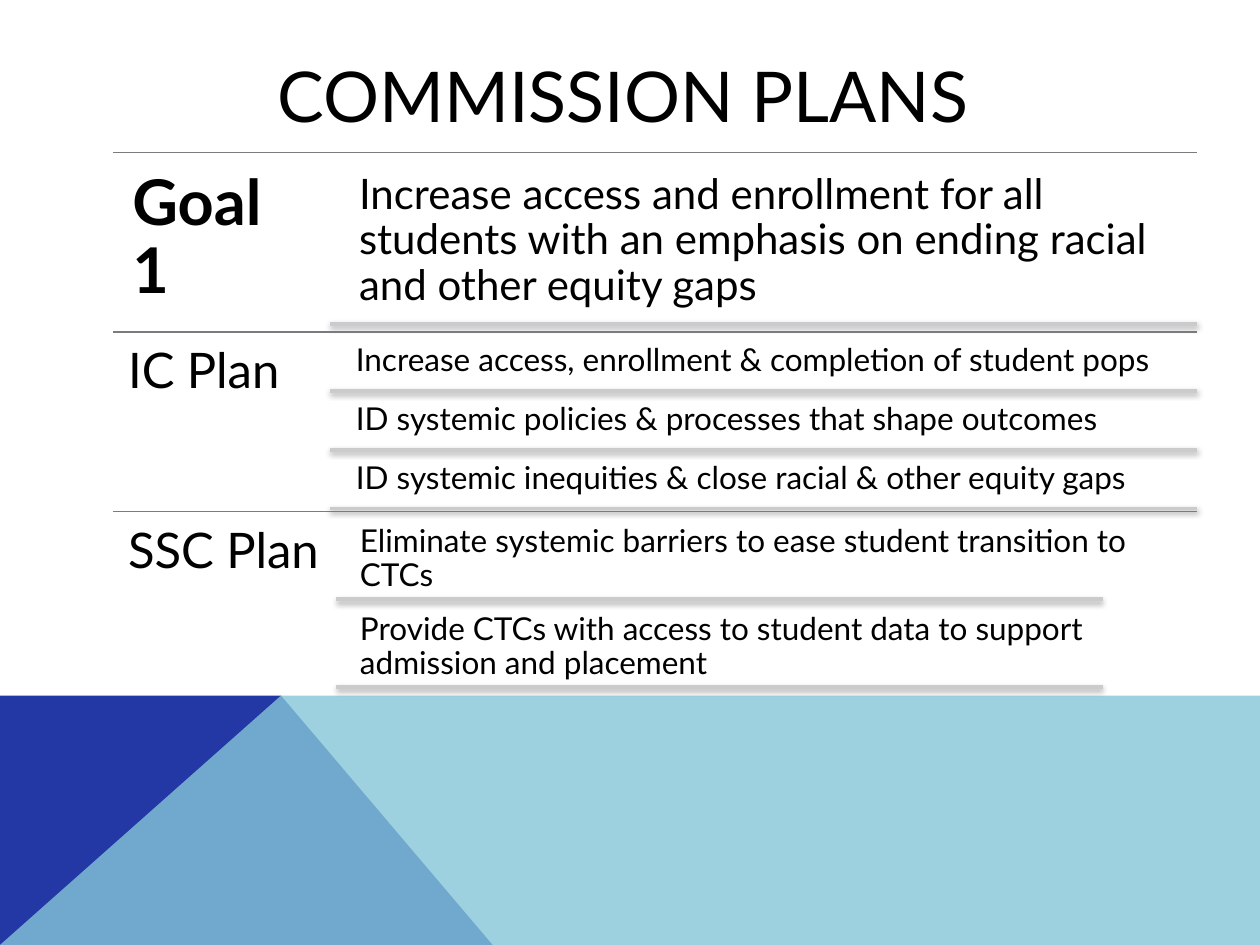
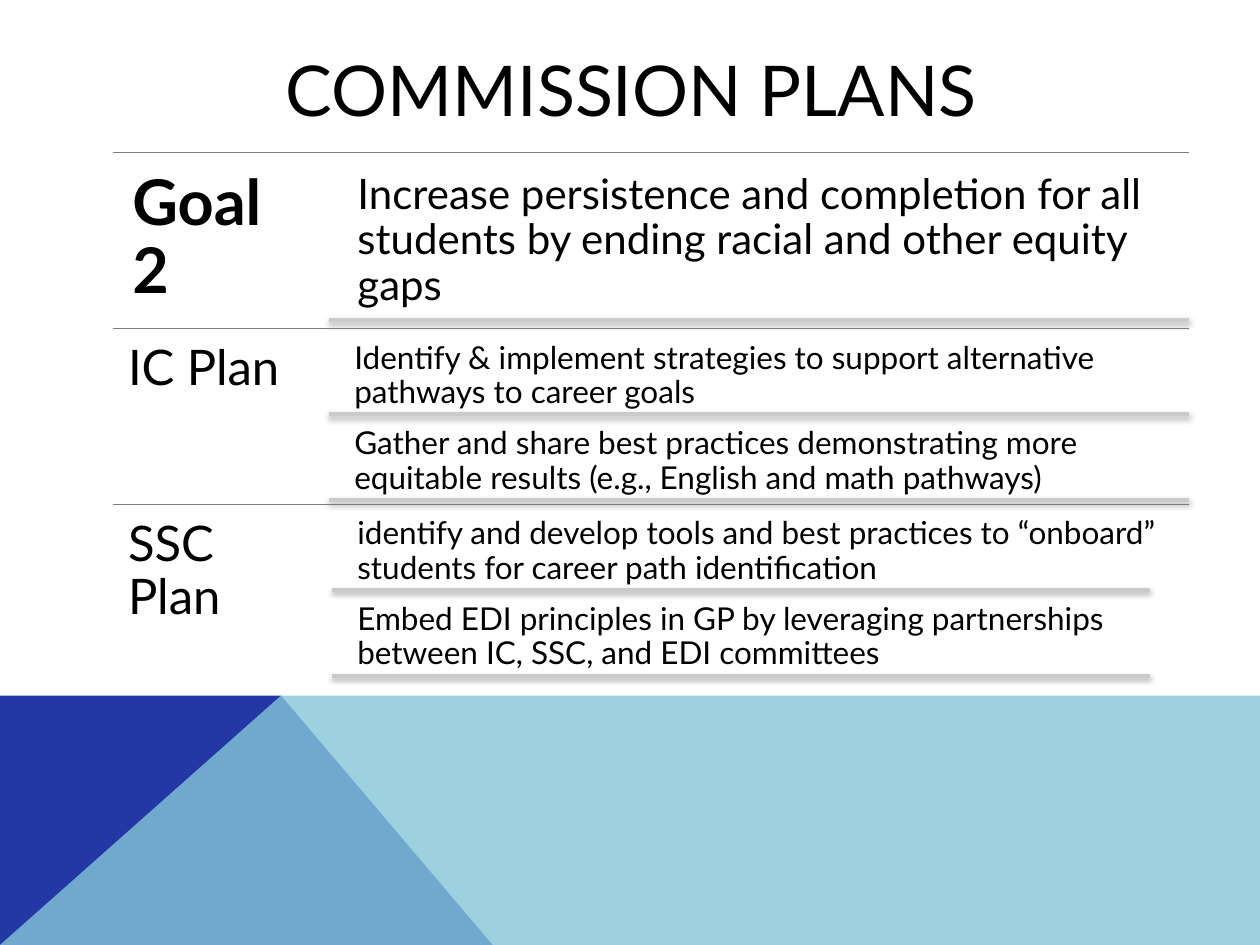
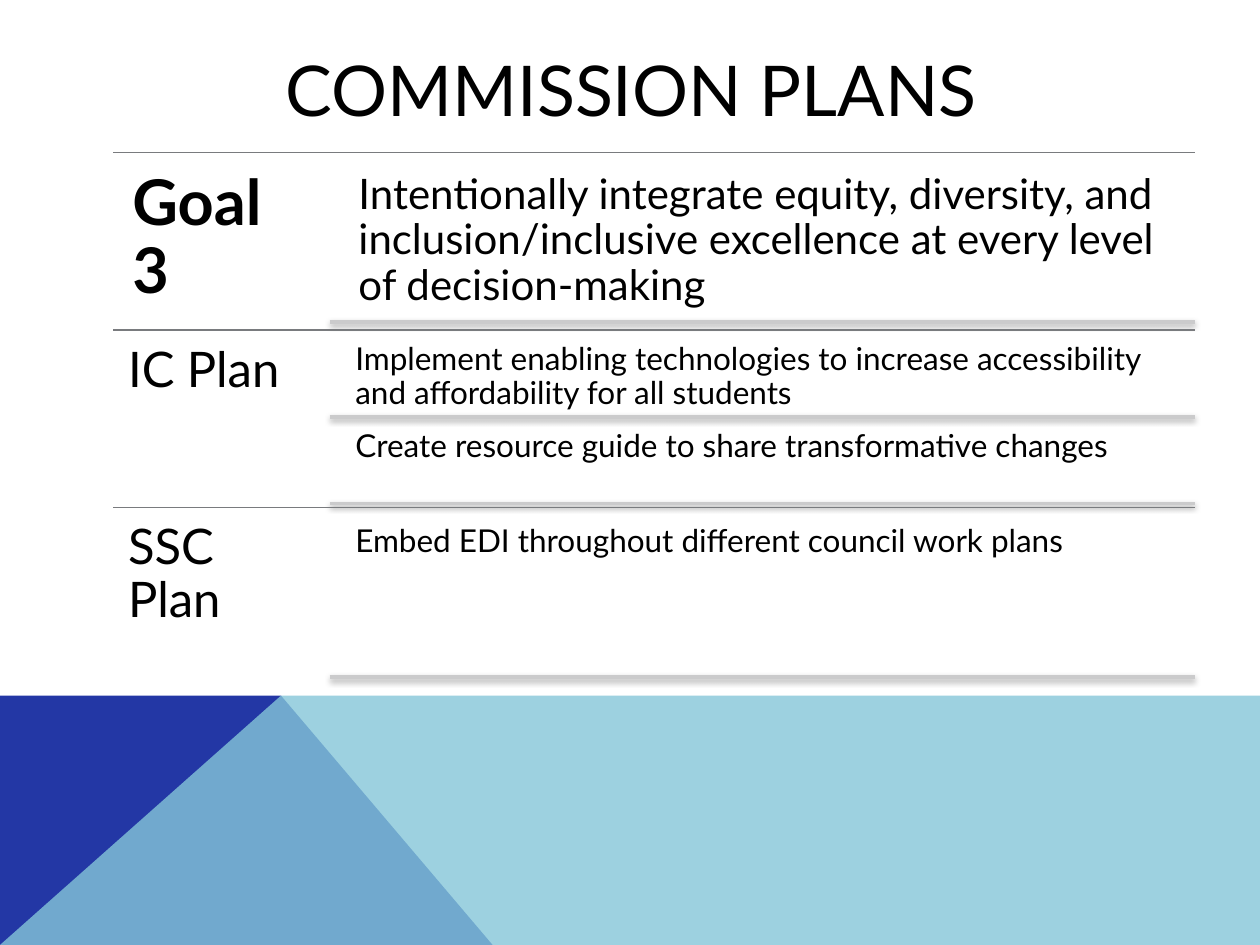
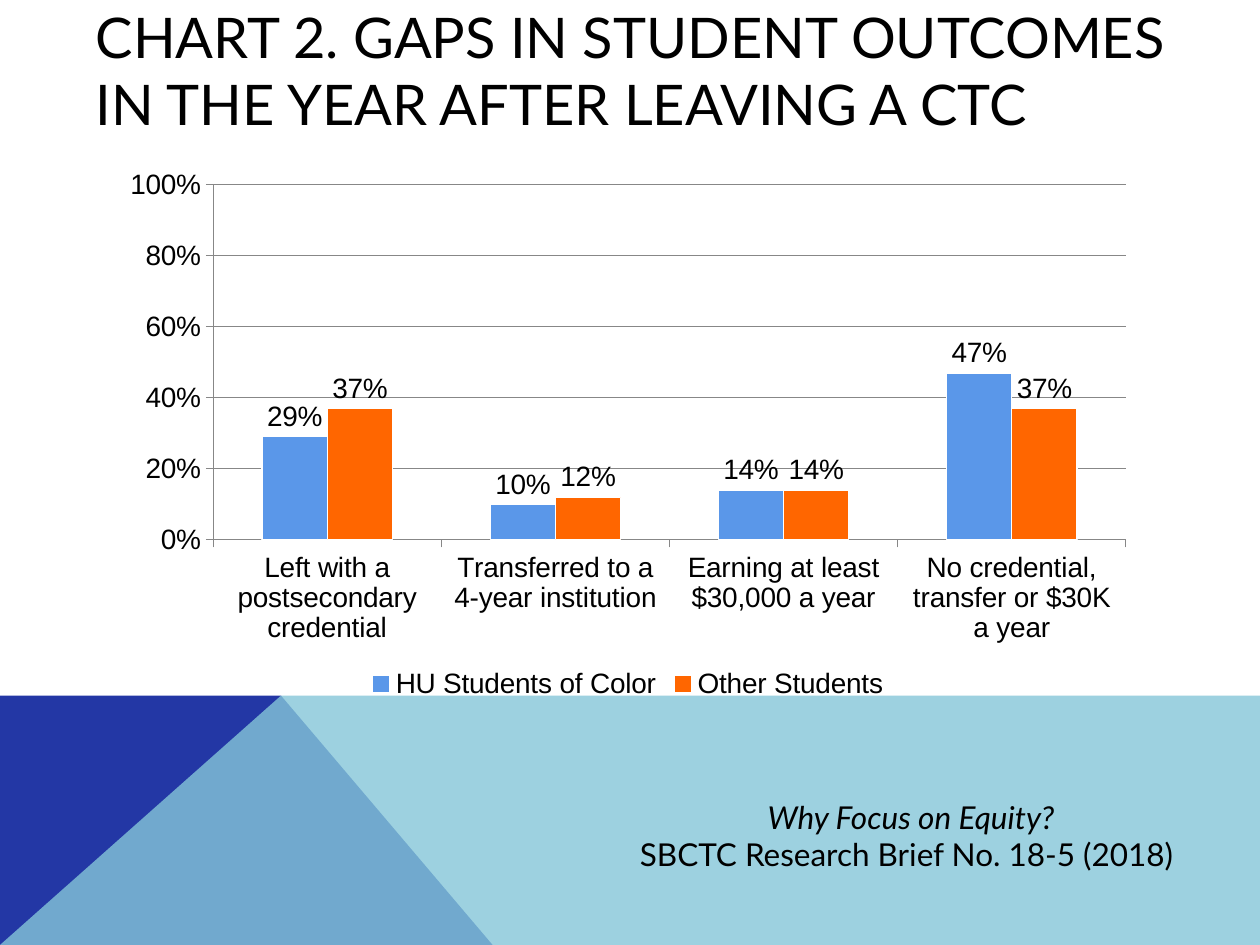
from dataclasses import dataclass
from typing import Optional

from lxml import etree
from pptx import Presentation
from pptx import util as u
from pptx.chart import data as chart_data
from pptx.dml import color
from pptx.enum import chart as charts
from pptx.enum import shapes, text
from pptx.oxml import ns

# Shared style
BLACK = color.RGBColor(0x00, 0x00, 0x00)
WHITE = color.RGBColor(0xFF, 0xFF, 0xFF)
NAVY = color.RGBColor(0x23, 0x37, 0xA5)
TEAL = color.RGBColor(0x85, 0xC6, 0xD9)
DIVIDER_GREY = color.RGBColor(0x79, 0x7B, 0x7E)
RULE_GREY = color.RGBColor(0xCB, 0xCB, 0xCC)
AXIS_GREY = color.RGBColor(0x87, 0x87, 0x87)
BAR_BLUE = color.RGBColor(0x5A, 0x97, 0xE9)
BAR_ORANGE = color.RGBColor(0xFF, 0x66, 0x00)
TEXT_FONT = "Lato"
CHART_FONT = "Arial"

PAGE_WIDTH, PAGE_HEIGHT = 720, 540
BAND_TOP = 397.5

# Goal pages: three blocks of equal height under one another
PLAN_LEFT, PLAN_TOP = 64.8, 87.1
LABEL_SHARE = 0.2
ITEM_TO_GAP = 20  # an item is this many times as tall as the gap around it


@dataclass
class LineStyle:
    colour: color.RGBColor
    width: float
    shadow_opacity: int
    shadow_distance: float


DIVIDER = LineStyle(DIVIDER_GREY, 0.75, 35, 1.8)
RULE = LineStyle(RULE_GREY, 2, 38, 1.6)


@dataclass
class Frame:
    left: float
    top: float
    width: float
    height: float


@dataclass
class Item:
    text: str
    right: Optional[float] = None


@dataclass
class Block:
    label: str
    items: list[Item]
    label_size: int = 28
    item_size: int = 18
    label_width: Optional[float] = None
    indent: float = 9.3
    rule_right: Optional[float] = None


@dataclass
class Plan:
    title_frame: Frame
    right: float
    block_height: float
    blocks: list[Block]


def goal(number: int, wording: str) -> Block:
    return Block(f"Goal {number}", [Item(wording)], 36, 24)


CENTRED_TITLE = Frame(64.8, 28.8, 591.8, 43.2)

PLANS = [
    Plan(Frame(43.9, 32.4, 624.2, 43.2), 684, 102.6, [
        goal(1, "Increase access and enrollment for all students with an "
                "emphasis on ending racial and other equity gaps"),
        Block("IC Plan", [
            Item("Increase access, enrollment & completion of student pops"),
            Item("ID systemic policies & processes that shape outcomes"),
            Item("ID systemic inequities & close racial & other equity gaps"),
        ]),
        Block("SSC Plan", [
            Item("Eliminate systemic barriers to ease student transition to CTCs"),
            Item("Provide CTCs with access to student data to support "
                 "admission and placement", 630),
        ], label_width=127.5, indent=8, rule_right=630),
    ]),
    Plan(CENTRED_TITLE, 679.7, 100.5, [
        goal(2, "Increase persistence and completion for all students by "
                "ending racial and other equity gaps"),
        Block("IC Plan", [
            Item("Identify & implement strategies to support alternative "
                 "pathways to career goals"),
            Item("Gather and share best practices demonstrating more equitable "
                 "results (e.g., English and math pathways)", 667.4),
        ]),
        Block("SSC Plan", [
            Item("identify and develop tools and best practices to “onboard” "
                 "students for career path identification"),
            Item("Embed EDI principles in GP by leveraging partnerships "
                 "between IC, SSC, and EDI committees", 657.4),
        ], label_width=125, indent=9, rule_right=657.4),
    ]),
    Plan(CENTRED_TITLE, 682.6, 101.5, [
        goal(3, "Intentionally integrate equity, diversity, and "
                "inclusion/inclusive excellence at every level of decision-making"),
        Block("IC Plan", [
            Item("Implement enabling technologies to increase accessibility "
                 "and affordability for all students"),
            Item("Create resource guide to share transformative changes"),
        ]),
        Block("SSC Plan", [
            Item("Embed EDI throughout different council work plans"),
        ]),
    ]),
]


# Basic parts
def style_font(font, size: float, name: str = TEXT_FONT, bold: bool = False,
               italic: bool = False) -> None:
    font.name, font.size = name, u.Pt(size)
    font.bold, font.italic = bold, italic
    font.color.rgb = BLACK


def place(shape, frame: Frame) -> None:
    shape.left, shape.top = u.Pt(frame.left), u.Pt(frame.top)
    shape.width, shape.height = u.Pt(frame.width), u.Pt(frame.height)


def add_page(deck, title: str, frame: Frame, size: int, align):
    page = deck.slides.add_slide(deck.slide_layouts[5])
    box = page.shapes.title
    place(box, frame)
    box.text_frame.text = title
    box.text_frame.word_wrap = True
    box.text_frame.auto_size = text.MSO_AUTO_SIZE.NONE
    box.text_frame.vertical_anchor = text.MSO_ANCHOR.MIDDLE
    para = box.text_frame.paragraphs[0]
    para.alignment = align
    style_font(para.font, size)
    return page


def add_box(page, frame: Frame):
    box = page.shapes.add_textbox(u.Pt(frame.left), u.Pt(frame.top),
                                  u.Pt(frame.width), u.Pt(frame.height))
    box.text_frame.word_wrap = True
    return box


def add_wording(page, frame: Frame, wording: str, size: int,
                bold: bool = False) -> None:
    body = add_box(page, frame).text_frame
    inset = u.Pt(0.3 * size)
    body.margin_left = body.margin_right = inset
    body.margin_top = body.margin_bottom = inset
    para = body.paragraphs[0]
    para.text = wording
    para.line_spacing = 0.9
    style_font(para.font, size, bold=bold)


def add_line(page, left: float, right: float, y: float, style: LineStyle) -> None:
    line = page.shapes.add_connector(shapes.MSO_CONNECTOR.STRAIGHT,
                                     u.Pt(left), u.Pt(y), u.Pt(right), u.Pt(y))
    line.line.color.rgb = style.colour
    line.line.width = u.Pt(style.width)
    properties = line.element.find(ns.qn("p:spPr"))
    effects = etree.SubElement(properties, ns.qn("a:effectLst"))
    shadow = etree.SubElement(effects, ns.qn("a:outerShdw"), {
        "blurRad": str(u.Pt(3.1)), "dist": str(u.Pt(style.shadow_distance)),
        "dir": "5400000", "rotWithShape": "0"})
    tint = etree.SubElement(shadow, ns.qn("a:srgbClr"), val=str(BLACK))
    etree.SubElement(tint, ns.qn("a:alpha"), val=str(style.shadow_opacity * 1000))


# Bottom band, moved into the layout so that every page shows it
def add_band_part(page, points: list[tuple[float, float]],
                  colour: color.RGBColor, opacity: int = 100) -> None:
    corners = [(u.Pt(x), u.Pt(y)) for x, y in points]
    builder = page.shapes.build_freeform(*corners[0])
    builder.add_line_segments(corners[1:], close=True)
    part = builder.convert_to_shape()
    part.shadow.inherit = False
    part.fill.solid()
    part.fill.fore_color.rgb = colour
    part.line.fill.background()
    if opacity < 100:
        tint = part.element.find(f".//{ns.qn('a:solidFill')}/{ns.qn('a:srgbClr')}")
        etree.SubElement(tint, ns.qn("a:alpha"), val=str(opacity * 1000))
    page.slide_layout.shapes.element.append(part.element)


def add_band(page) -> None:
    peak = (160.6, BAND_TOP)
    corner = (0, PAGE_HEIGHT)
    add_band_part(page, [corner, (0, BAND_TOP), peak, (281.5, PAGE_HEIGHT)], NAVY)
    add_band_part(page, [corner, peak, (PAGE_WIDTH, BAND_TOP),
                         (PAGE_WIDTH, PAGE_HEIGHT)], TEAL, 80)


# Goal pages
def add_block(page, block: Block, top: float, plan: Plan) -> None:
    label_width = block.label_width or LABEL_SHARE * (plan.right - PLAN_LEFT)
    rule_left = PLAN_LEFT + label_width
    item_left = rule_left + block.indent
    count = len(block.items)
    gap = plan.block_height / (count * (ITEM_TO_GAP + 1) + 1)
    item_height = ITEM_TO_GAP * gap

    add_line(page, PLAN_LEFT, plan.right, top, DIVIDER)
    add_wording(page, Frame(PLAN_LEFT, top, label_width, plan.block_height),
                block.label, block.label_size, bold=block.label.startswith("Goal"))
    for index, item in enumerate(block.items):
        item_top = top + gap + index * (item_height + gap)
        item_width = (item.right or plan.right) - item_left
        add_wording(page, Frame(item_left, item_top, item_width, item_height),
                    item.text, block.item_size)
        add_line(page, rule_left, block.rule_right or plan.right,
                 item_top + item_height, RULE)


def add_plan_page(deck, plan: Plan):
    page = add_page(deck, "COMMISSION PLANS", plan.title_frame, 40,
                    text.PP_ALIGN.CENTER)
    for index, block in enumerate(plan.blocks):
        add_block(page, block, PLAN_TOP + index * plan.block_height, plan)
    return page


# Chart page
def add_outcome_chart(page, frame: Frame) -> None:
    outcomes = chart_data.CategoryChartData(number_format="0%")
    outcomes.categories = [
        "Left with a postsecondary credential",
        "Transferred to a 4-year institution",
        "Earning at least $30,000 a year",
        "No credential, transfer or $30K a year",
    ]
    outcomes.add_series("HU Students of Color", (0.29, 0.10, 0.14, 0.47))
    outcomes.add_series("Other Students", (0.37, 0.12, 0.14, 0.37))
    chart = page.shapes.add_chart(
        charts.XL_CHART_TYPE.COLUMN_CLUSTERED, u.Pt(frame.left), u.Pt(frame.top),
        u.Pt(frame.width), u.Pt(frame.height), outcomes).chart
    style_font(chart.font, 16, CHART_FONT)
    chart.has_title = False
    chart.has_legend = True
    chart.legend.position = charts.XL_LEGEND_POSITION.BOTTOM
    chart.legend.include_in_layout = False

    values = chart.value_axis
    values.minimum_scale, values.maximum_scale = 0, 1
    values.major_unit = 0.2
    values.has_major_gridlines = True
    values.tick_labels.number_format = "0%"
    values.tick_labels.number_format_is_linked = False
    for axis in (values, chart.category_axis):
        axis.major_tick_mark = charts.XL_TICK_MARK.OUTSIDE
    for part in (values, values.major_gridlines, chart.category_axis):
        part.format.line.color.rgb = AXIS_GREY
        part.format.line.width = u.Pt(0.75)

    plot = chart.plots[0]
    plot.gap_width, plot.overlap = 150, 0
    plot.vary_by_categories = False
    for series, colour in zip(plot.series, (BAR_BLUE, BAR_ORANGE)):
        series.format.fill.solid()
        series.format.fill.fore_color.rgb = colour
        series.format.line.color.rgb = WHITE
        series.format.line.width = u.Pt(0.75)
        labels = series.data_labels
        labels.show_value = True
        labels.number_format = "0%"
        labels.number_format_is_linked = False
        labels.position = charts.XL_LABEL_POSITION.OUTSIDE_END
        style_font(labels.font, 16, CHART_FONT)


def add_chart_page(deck) -> None:
    page = add_page(
        deck, "CHART 2. GAPS IN STUDENT OUTCOMES IN THE YEAR AFTER LEAVING A CTC",
        Frame(47.5, 18, 635, 43.2), 32, text.PP_ALIGN.LEFT)
    add_outcome_chart(page, Frame(62.6, 90.7, 592.6, 311.8))

    # Source of the figures
    body = add_box(page, Frame(358.6, 452.2, 324, 51)).text_frame
    heading = body.paragraphs[0]
    heading.text = "Why Focus on Equity?"
    heading.alignment = text.PP_ALIGN.CENTER
    style_font(heading.font, 18, italic=True)
    brief = body.add_paragraph()
    brief.text = "SBCTC Research Brief No. 18-5 (2018)"
    style_font(brief.font, 18)


def main() -> None:
    deck = Presentation()
    deck.slide_width, deck.slide_height = u.Pt(PAGE_WIDTH), u.Pt(PAGE_HEIGHT)
    pages = [add_plan_page(deck, plan) for plan in PLANS]
    add_band(pages[0])
    add_chart_page(deck)
    deck.save("out.pptx")


if __name__ == "__main__":
    main()
